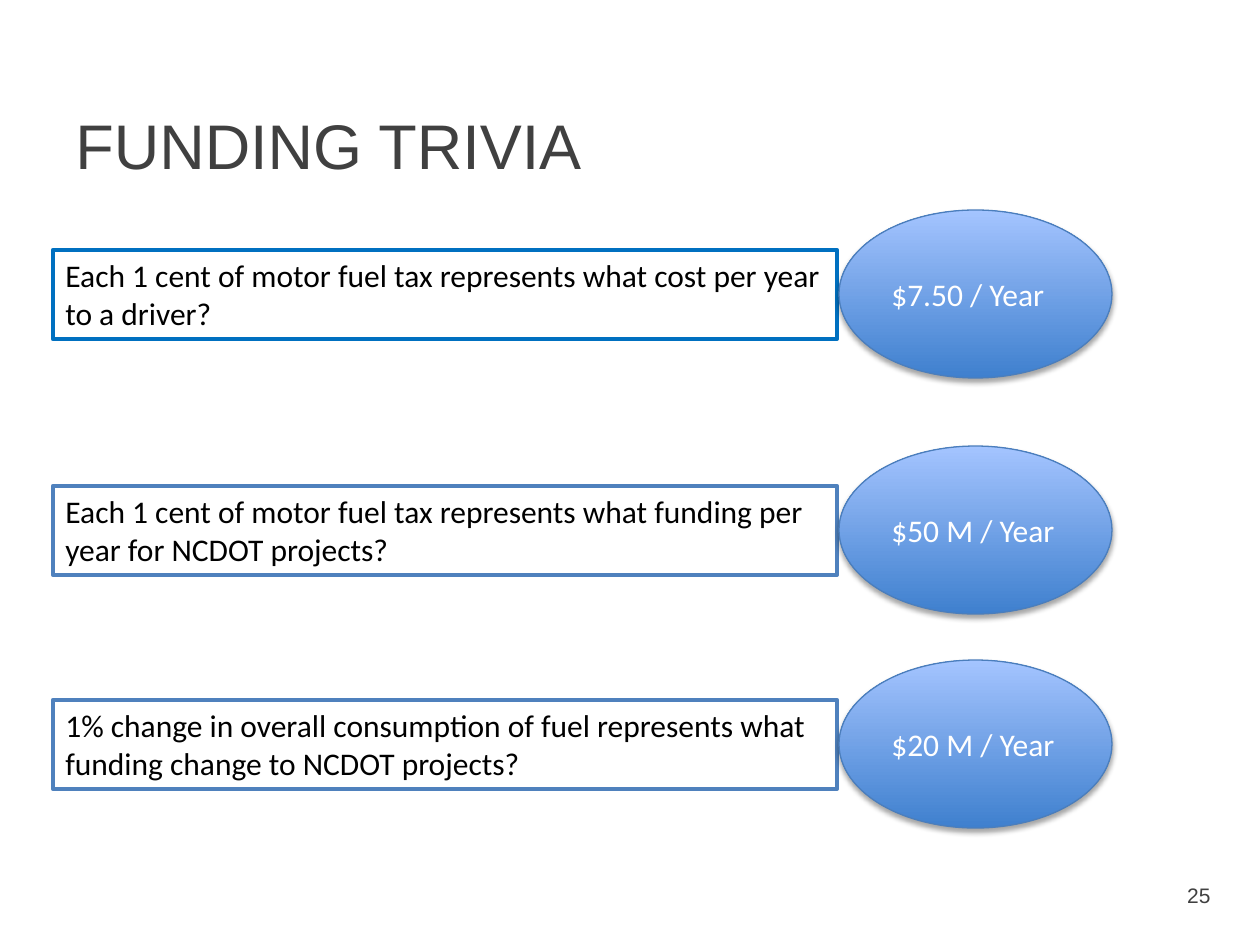
from dataclasses import dataclass

from lxml import etree
from pptx import Presentation
from pptx.dml.color import RGBColor
from pptx.enum import shapes, text
from pptx.oxml import ns
from pptx.shapes.autoshape import Shape
from pptx.slide import Slide
from pptx.util import Emu, Pt

PX_PER_INCH = 126
INK = RGBColor(0x40, 0x40, 0x40)
BLACK = RGBColor(0x00, 0x00, 0x00)
WHITE = RGBColor(0xFF, 0xFF, 0xFF)
BRIGHT_BLUE = RGBColor(0x00, 0x70, 0xC0)
STEEL_BLUE = RGBColor(0x4F, 0x81, 0xBD)
OVAL_EDGE = RGBColor(0x4B, 0x7E, 0xBC)
OVAL_BOTTOM = RGBColor(0x3F, 0x80, 0xCE)
OVAL_TOP = RGBColor(0xA4, 0xC4, 0xFF)

QUESTION_LEFT, QUESTION_WIDTH, QUESTION_HEIGHT = 53, 784, 89
ANSWER_LEFT, ANSWER_WIDTH, ANSWER_HEIGHT = 839, 273, 168


@dataclass(frozen=True)
class Trivia:
    question: str
    answer: str
    middle: int
    border: RGBColor = STEEL_BLUE


TRIVIA = [
    Trivia("Each 1 cent of motor fuel tax represents what cost per year to a driver?",
           "$7.50 / Year", 294, BRIGHT_BLUE),
    Trivia("Each 1 cent of motor fuel tax represents what funding per year for NCDOT projects?",
           "$50 M / Year", 530),
    Trivia("1% change in overall consumption of fuel represents what funding change to NCDOT projects?",
           "$20 M / Year", 744),
]


def px(count: int) -> Emu:
    return Emu(round(count * 914400 / PX_PER_INCH))


def write(shape: Shape, words: str, *, size: int = 18, font: str = "Calibri",
          color: RGBColor = BLACK, align=text.PP_ALIGN.LEFT,
          anchor=text.MSO_ANCHOR.TOP) -> None:
    frame = shape.text_frame
    frame.word_wrap = True
    frame.vertical_anchor = anchor
    paragraph = frame.paragraphs[0]
    paragraph.alignment = align
    run = paragraph.add_run()
    run.text = words
    run.font.size = Pt(size)
    run.font.name = font
    run.font.color.rgb = color


def add_box(slide: Slide, left: int, top: int, width: int, height: int) -> Shape:
    return slide.shapes.add_textbox(px(left), px(top), px(width), px(height))


def cast_shadow(shape: Shape) -> None:
    """Put a soft shadow just below the shape."""
    shape.shadow.inherit = False
    effects = shape._element.spPr.find(ns.qn("a:effectLst"))
    shadow = etree.SubElement(effects, ns.qn("a:outerShdw"), blurRad=str(Pt(3.1)),
                              dist=str(Pt(1.8)), dir="5400000", rotWithShape="0")
    tint = etree.SubElement(shadow, ns.qn("a:srgbClr"), val="000000")
    etree.SubElement(tint, ns.qn("a:alpha"), val="35000")


def add_question(slide: Slide, trivia: Trivia) -> None:
    question = add_box(slide, QUESTION_LEFT, trivia.middle - QUESTION_HEIGHT // 2,
                       QUESTION_WIDTH, QUESTION_HEIGHT)
    question.line.color.rgb = trivia.border
    question.line.width = Pt(2.5)
    write(question, trivia.question)
    question.text_frame.auto_size = text.MSO_AUTO_SIZE.SHAPE_TO_FIT_TEXT


def add_answer(slide: Slide, trivia: Trivia) -> None:
    answer = slide.shapes.add_shape(
        shapes.MSO_SHAPE.OVAL, px(ANSWER_LEFT), px(trivia.middle - ANSWER_HEIGHT // 2),
        px(ANSWER_WIDTH), px(ANSWER_HEIGHT))
    answer.fill.gradient()
    answer.fill.gradient_angle = 90
    for stop, color, position in zip(answer.fill.gradient_stops,
                                     (OVAL_BOTTOM, OVAL_TOP), (0, 1)):
        stop.color.rgb = color
        stop.position = position
    answer.line.color.rgb = OVAL_EDGE
    answer.line.width = Pt(0.75)
    cast_shadow(answer)
    write(answer, trivia.answer, color=WHITE, anchor=text.MSO_ANCHOR.MIDDLE)


def main() -> None:
    deck = Presentation()
    deck.slide_width, deck.slide_height = px(1260), px(945)
    slide = deck.slides.add_slide(deck.slide_layouts[6])

    title = add_box(slide, 63, 94, 1134, 158)
    title.text_frame.margin_top = px(12)
    write(title, "FUNDING TRIVIA", size=36, font="Arial", color=INK)

    page_number = add_box(slide, 1147, 876, 76, 50)
    write(page_number, "25", size=12, font="Arial", color=INK, align=text.PP_ALIGN.RIGHT)

    for trivia in TRIVIA:
        add_question(slide, trivia)
    for trivia in TRIVIA:
        add_answer(slide, trivia)

    deck.save("out.pptx")


if __name__ == "__main__":
    main()
